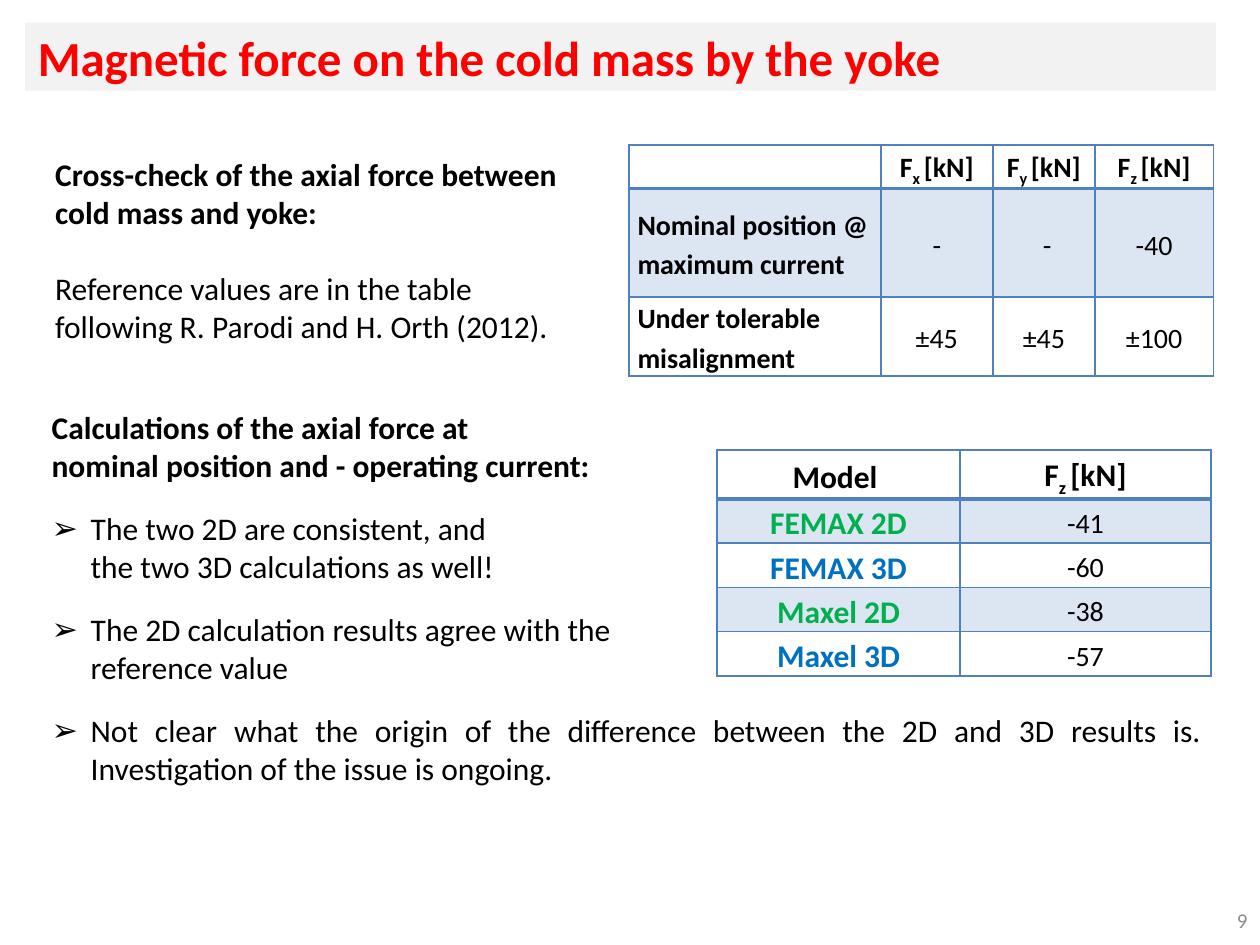
from itertools import product
from lxml import etree
from pptx import Presentation
from pptx.dml.color import RGBColor
from pptx.enum.text import MSO_ANCHOR, MSO_AUTO_SIZE, PP_ALIGN
from pptx.oxml.ns import qn
from pptx.util import Inches, Pt

THEME = dict(font="Calibri", title=28, body=18, cell=16, number=12,
             ink="000000", red="FF0000", bar="F2F2F2", grey="8C8C8C",
             band="DCE6F2", border="4F81BD", green="00B050", blue="0070C0")

TITLE = "Magnetic force on the cold mass by the yoke"
PAGE = "9"
# (text, style), a vertical tab is a line break
REFERENCE = [
    ("Cross-check of the axial force between cold mass and yoke:", "heading"),
    ("Reference values are in the table following R. Parodi and H. Orth (2012).", "plain"),
]
FINDINGS = [
    ("Calculations of the axial force at\vnominal position and - operating current:", "heading"),
    ("The two 2D are consistent, and\vthe two 3D calculations as well!", "bullet"),
    ("The 2D calculation results agree with the\vreference value", "bullet"),
    ("Not clear what the origin of the difference between the 2D and 3D results is. "
     "Investigation of the issue is ongoing.", "justified bullet"),
]
# An underscore puts the next letter in subscript
LIMITS = dict(
    at=(4.99, 1.15), cols=[2, 0.89, 0.81, 0.94], rows=[0.27, 0.86, 0.57],
    label_align=PP_ALIGN.LEFT, head_size=THEME["cell"], label_colors=["ink", "ink"],
    cells=[["", "F_x [kN]", "F_y [kN]", "F_z [kN]"],
           ["Nominal position @ maximum current", "-", "\u00a0-", "-40"],
           ["Under tolerable misalignment", "±45", "±45", "±100"]])
MODELS = dict(
    at=(5.69, 3.57), cols=[1.93, 1.99], rows=[0.27] * 5,
    label_align=PP_ALIGN.CENTER, head_size=THEME["body"],
    label_colors=["green", "blue", "green", "blue"],
    cells=[["Model\u00a0", "F_z [kN]"], ["FEMAX 2D", "-41"], ["FEMAX 3D", "-60"],
           ["Maxel 2D", "-38"], ["Maxel 3D", "-57"]])


def rgb(name):
    return RGBColor.from_string(THEME[name])


def style(p, size, color="ink", bold=False):
    for r in p.runs:
        r.font.name, r.font.size, r.font.bold = THEME["font"], Pt(size), bold
        r.font.color.rgb = rgb(color)


def place(sp, left, top, width, height):
    sp.left, sp.top, sp.width, sp.height = map(Inches, (left, top, width, height))
    tf = sp.text_frame
    tf.word_wrap, tf.auto_size = True, MSO_AUTO_SIZE.NONE
    return tf


def set_bullet(p, char=None, indent=0.31):
    pPr = p._p.get_or_add_pPr()
    hang = Inches(indent) if char else 0
    pPr.set("marL", str(hang))
    pPr.set("indent", str(-hang))
    if char:
        etree.SubElement(pPr, qn("a:buChar")).set("char", char)
    else:
        etree.SubElement(pPr, qn("a:buNone"))


def write(tf, items, gap):
    for i, (content, kind) in enumerate(items):
        p = tf.paragraphs[0] if i == 0 else tf.add_paragraph()
        p.text = content
        p.space_before = Pt(gap if i else 0)
        p.alignment = PP_ALIGN.JUSTIFY if "justified" in kind else PP_ALIGN.LEFT
        set_bullet(p, "➢" if "bullet" in kind else None)
        style(p, THEME["body"], bold=kind == "heading")


def set_borders(cell, header):
    tcPr = cell._tc.get_or_add_tcPr()
    for i, side in enumerate(("lnL", "lnR", "lnT", "lnB")):
        ln = etree.Element(qn("a:" + side))
        ln.set("w", str(Pt(2 if header and side == "lnB" else 1)))
        fill = etree.SubElement(ln, qn("a:solidFill"))
        etree.SubElement(fill, qn("a:srgbClr")).set("val", THEME["border"])
        tcPr.insert(i, ln)


def write_cell(p, content):
    base, mark, rest = content.partition("_")
    p.text = base
    if mark:
        sub = p.add_run()
        sub.text = rest[:2]
        sub.font._element.set("baseline", "-25000")
        p.add_run().text = rest[2:]


def add_grid(slide, spec_table):
    cells, cols, rows = (spec_table[k] for k in ("cells", "cols", "rows"))
    left, top = spec_table["at"]
    table = slide.shapes.add_table(len(rows), len(cols), Inches(left), Inches(top),
                                   Inches(sum(cols)), Inches(sum(rows))).table
    for col, width in zip(table.columns, cols):
        col.width = Inches(width)
    for row, height in zip(table.rows, rows):
        row.height = Inches(height)
    for i, j in product(range(len(rows)), range(len(cols))):
        cell = table.cell(i, j)
        header, label = i == 0, i > 0 and j == 0
        cell.margin_left = cell.margin_right = Inches(0.07)
        cell.margin_top = cell.margin_bottom = 0
        cell.vertical_anchor = MSO_ANCHOR.MIDDLE
        if i % 2:
            cell.fill.solid()
            cell.fill.fore_color.rgb = rgb("band")
        else:
            cell.fill.background()
        set_borders(cell, header)
        p = cell.text_frame.paragraphs[0]
        write_cell(p, cells[i][j])
        p.alignment = spec_table["label_align"] if label else PP_ALIGN.CENTER
        p.line_spacing, p.space_before, p.space_after = 1.15, Pt(6), Pt(6)
        style(p, spec_table["head_size"] if header or label else THEME["cell"],
              spec_table["label_colors"][i - 1] if label else "ink", header or label)


def main():
    prs = Presentation()
    prs.slide_width, prs.slide_height = Inches(10), Inches(7.5)
    slide = prs.slides.add_slide(prs.slide_layouts[1])

    title = slide.shapes.title
    tf = place(title, 0.2, 0.18, 9.45, 0.54)
    title.fill.solid()
    title.fill.fore_color.rgb = rgb("bar")
    tf.text, tf.vertical_anchor = TITLE, MSO_ANCHOR.MIDDLE
    tf.paragraphs[0].alignment = PP_ALIGN.LEFT
    style(tf.paragraphs[0], THEME["title"], "red", True)

    write(place(slide.placeholders[1], 0.31, 3.19, 9.33, 3.33), FINDINGS, gap=14.5)
    reference = slide.shapes.add_textbox(0, 0, 0, 0)
    write(place(reference, 0.34, 1.18, 4.26, 1.92), REFERENCE, gap=22)

    for grid in (LIMITS, MODELS):
        add_grid(slide, grid)

    tf = place(slide.shapes.add_textbox(0, 0, 0, 0), 7.67, 7.1, 2.33, 0.4)
    tf.text, tf.vertical_anchor = PAGE, MSO_ANCHOR.MIDDLE
    tf.paragraphs[0].alignment = PP_ALIGN.RIGHT
    style(tf.paragraphs[0], THEME["number"], "grey")

    prs.save("out.pptx")


if __name__ == "__main__":
    main()
